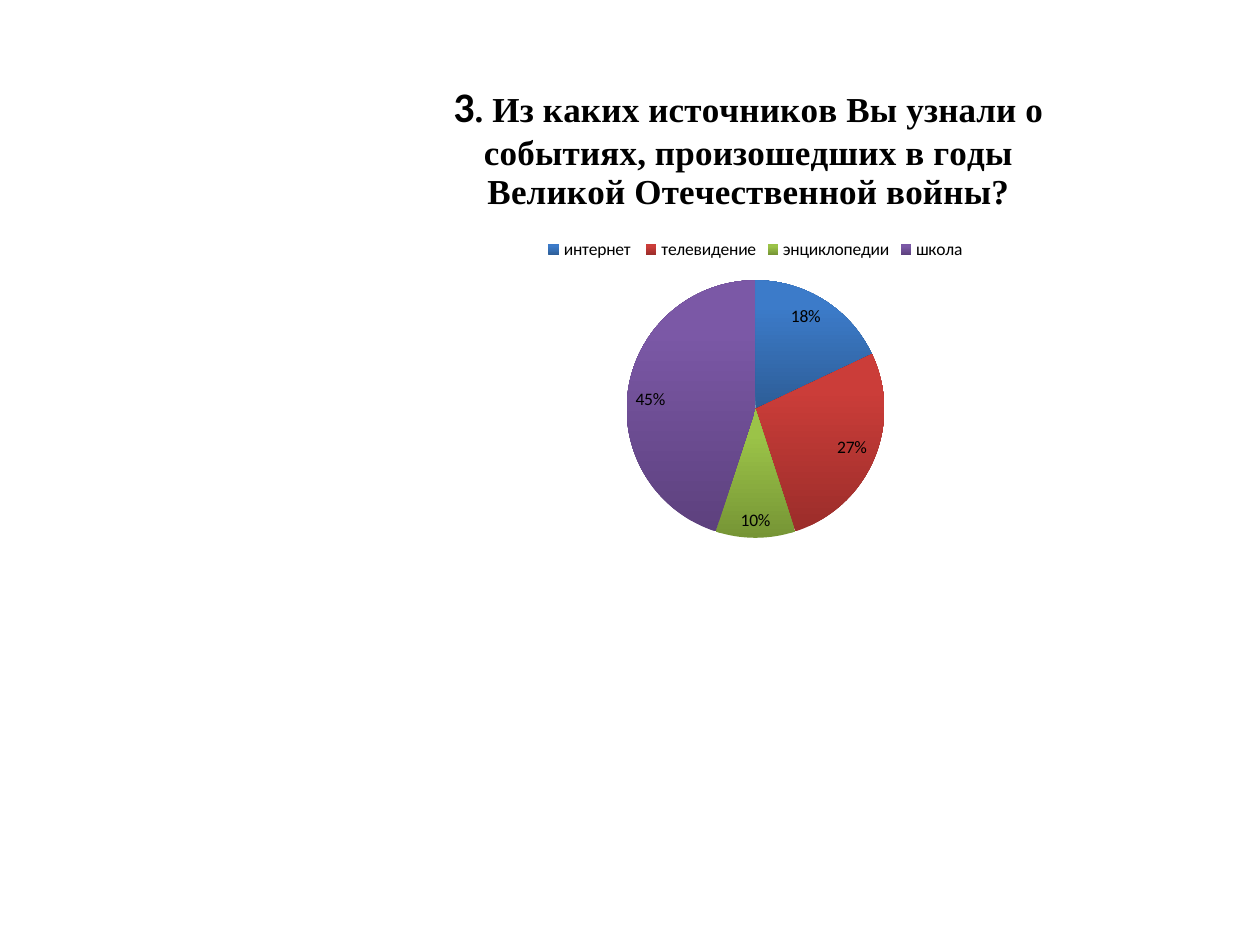
import lxml.etree
import pptx
import pptx.chart.data
import pptx.dml.color
import pptx.enum.chart
import pptx.oxml.ns
import pptx.util

PX = 914400 // 126
RGB = pptx.dml.color.RGBColor
BLACK = RGB(0x00, 0x00, 0x00)
# Category, percent, dark bottom colour, light top colour
SOURCES = [
    ("интернет ", 18, RGB(0x2D, 0x5D, 0x97), RGB(0x3C, 0x7B, 0xC9)),
    ("телевидение", 27, RGB(0x9B, 0x2D, 0x2A), RGB(0xCB, 0x3D, 0x39)),
    ("энциклопедии", 10, RGB(0x76, 0x95, 0x35), RGB(0x9B, 0xC3, 0x48)),
    ("школа", 45, RGB(0x5D, 0x41, 0x7E), RGB(0x7B, 0x58, 0xA6)),
]
TITLE = [
    ("3", "Calibri", 24),
    (". Из каких источников Вы узнали о событиях, произошедших в годы "
     "Великой Отечественной войны?", "Times New Roman", 20),
]


def place(element, index, **settings):
    """Give a chart part a manual layout, in fractions of the chart."""
    qn = pptx.oxml.ns.qn
    for layout in element.findall(qn("c:layout")):
        element.remove(layout)
    layout = lxml.etree.Element(qn("c:layout"))
    manual = lxml.etree.SubElement(layout, qn("c:manualLayout"))
    for name, value in settings.items():
        lxml.etree.SubElement(manual, qn("c:" + name)).set("val", str(value))
    element.insert(index, layout)


deck = pptx.Presentation()
deck.slide_width = pptx.util.Inches(10)
deck.slide_height = pptx.util.Inches(7.5)
page = deck.slides.add_slide(deck.slide_layouts[6])

data = pptx.chart.data.CategoryChartData()
data.categories = [source[0] for source in SOURCES]
data.add_series("Series 1", [source[1] for source in SOURCES])
chart = page.shapes.add_chart(
    pptx.enum.chart.XL_CHART_TYPE.PIE,
    353 * PX, 66 * PX, 805 * PX, 520 * PX, data).chart
chart.font.name = "Calibri"
chart.font.size = pptx.util.Pt(10)
chart.font.color.rgb = BLACK

chart.has_title = True
para = chart.chart_title.text_frame.paragraphs[0]
for text, font_name, size in TITLE:
    span = para.add_run()
    span.text = text
    span.font.name = font_name
    span.font.size = pptx.util.Pt(size)
    span.font.bold = True
    span.font.color.rgb = BLACK

chart.has_legend = True
chart.legend.position = pptx.enum.chart.XL_LEGEND_POSITION.TOP
chart.legend.include_in_layout = False

plot = chart.plots[0]
plot.vary_by_categories = True
plot.has_data_labels = True
labels = plot.data_labels
labels.show_percentage = True
labels.show_value = False
labels.number_format = "0%"
labels.number_format_is_linked = False
labels.position = pptx.enum.chart.XL_LABEL_POSITION.INSIDE_END

for index, (_, _, dark, light) in enumerate(SOURCES):
    fill = plot.series[0].points[index].format.fill
    fill.gradient()
    fill.gradient_angle = 90
    for stop, colour, position in zip(fill.gradient_stops, (dark, light), (0, 0.8)):
        stop.color.rgb = colour
        stop.position = position

chart_xml = chart.element
place(chart_xml.find(".//" + pptx.oxml.ns.qn("c:title")), 1,
      xMode="edge", yMode="edge", x=0.12, y=0.02)
place(chart_xml.find(".//" + pptx.oxml.ns.qn("c:plotArea")), 0,
      layoutTarget="inner", xMode="edge", yMode="edge",
      x=0.34, y=0.41, w=0.32, h=0.5)

deck.save("out.pptx")
